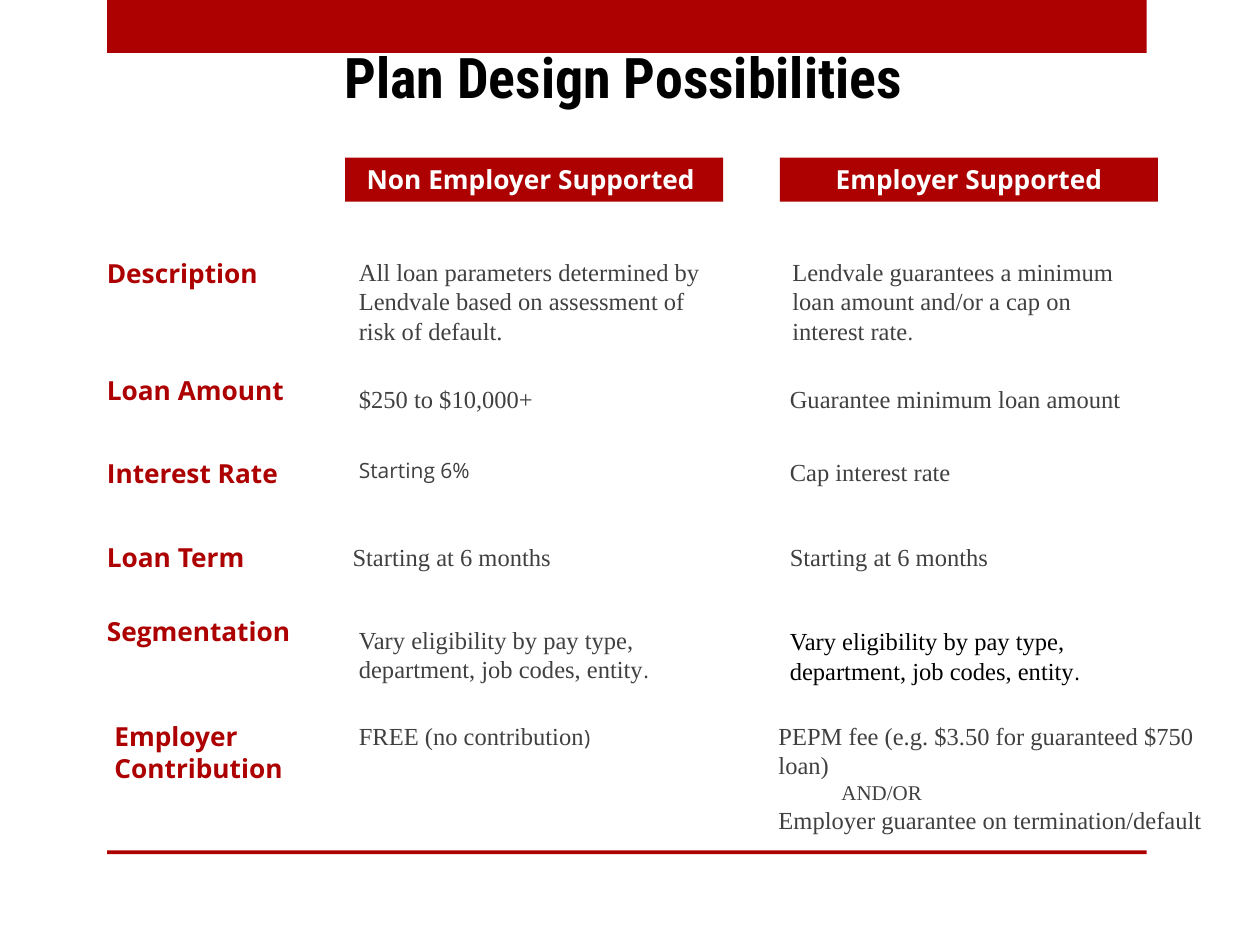
from dataclasses import dataclass

from pptx import Presentation
from pptx import util as u
from pptx.dml.color import RGBColor
from pptx.enum import shapes, text

COLORS = {"red": "AD0101", "grey": "404040", "black": "000000", "white": "FFFFFF"}
SERIF = {"name": "Times New Roman", "size": u.Pt(14), "color": "grey"}
SANS = {"name": "Open Sans", "size": u.Pt(12), "color": "grey"}
SMALL = {**SERIF, "size": u.Pt(12)}
DARK = {**SERIF, "color": "black"}
LABEL = {"name": "Open Sans", "size": u.Pt(15), "bold": True, "color": "red"}
HEADER = {**LABEL, "color": "white"}
TITLE = {"name": "Roboto Condensed", "size": u.Pt(32), "bold": True, "color": "black"}

LABEL_X, BASIC_X, SUPPORTED_X = 0.75, 2.75, 6.17
LABEL_WIDTH, CELL_WIDTH = 1.76, 3
HEADER_Y, HEADER_HEIGHT = 1.25, 0.35
ELIGIBILITY = "Vary eligibility by pay type, department, job codes, entity"


@dataclass
class Span:
    words: str
    style: dict


@dataclass
class Entry:
    """One text block: a list of paragraphs, each a list of spans."""
    left: float
    top: float
    width: float
    height: float
    paragraphs: list[list[Span]]


def label(words: str, top: float, left: float = LABEL_X,
          width: float = LABEL_WIDTH, height: float = 0.35) -> Entry:
    return Entry(left, top, width, height, [[Span(words, LABEL)]])


def cell(left: float, top: float, height: float, *spans: Span) -> Entry:
    return Entry(left, top, CELL_WIDTH, height, [list(spans)])


def serif(words: str) -> Span:
    return Span(words, SERIF)


ENTRIES = [
    label("Description", 1.99),
    label("Loan Amount", 2.92),
    label("Interest Rate", 3.58),
    label("Loan Term", 4.25),
    label("Segmentation", 4.83),
    label("Employer Contribution", 5.67, left=0.81, width=1.61, height=0.61),
    cell(BASIC_X, 1.99, 0.81, serif("All loan parameters determined by Lendvale "
                                    "based on assessment of risk of default.")),
    cell(BASIC_X, 3, 0.34, serif("$250 to $10,000+")),
    cell(BASIC_X, 3.58, 0.3, Span("Starting 6%", SANS)),
    cell(2.7, 4.25, 0.34, serif("Starting at 6 months")),
    cell(BASIC_X, 4.91, 0.57, serif(ELIGIBILITY), Span(".", SANS)),
    cell(BASIC_X, 5.67, 0.34, serif("FREE (no contribution"), Span(")", SANS)),
    cell(6.19, 1.99, 0.81, serif("Lendvale guarantees a minimum loan amount "
                                 "and/or a cap on interest rate"), Span(".", SANS)),
    cell(SUPPORTED_X, 3, 0.34, serif("Guarantee minimum loan amount")),
    cell(SUPPORTED_X, 3.58, 0.34, serif("Cap interest rate")),
    cell(SUPPORTED_X, 4.25, 0.34, serif("Starting at 6 months")),
    cell(SUPPORTED_X, 4.92, 0.57, Span(ELIGIBILITY, DARK),
         Span(".", {**SANS, "color": "black"})),
    Entry(6.08, 5.67, 3.92, 1.04, [
        [serif("PEPM fee (e.g. $3.50 for guaranteed $750 loan)")],
        [Span("\tAND/OR", SMALL)],
        [serif("Employer guarantee on termination/default")],
    ]),
]


def color(name: str) -> RGBColor:
    return RGBColor.from_string(COLORS[name])


def write(frame, paragraphs: list[list[Span]], align=text.PP_ALIGN.LEFT) -> None:
    frame.word_wrap = True
    for index, spans in enumerate(paragraphs):
        para = frame.add_paragraph() if index else frame.paragraphs[0]
        para.alignment = align
        for span in spans:
            run = para.add_run()
            run.text = span.words
            for key, value in span.style.items():
                if key == "color":
                    run.font.color.rgb = color(value)
                else:
                    setattr(run.font, key, value)


def add_band(page, left: float, top: float, width: float, height: float):
    band = page.shapes.add_shape(shapes.MSO_SHAPE.RECTANGLE, u.Inches(left),
                                 u.Inches(top), u.Inches(width), u.Inches(height))
    band.shadow.inherit = False
    band.fill.solid()
    band.fill.fore_color.rgb = color("red")
    band.line.fill.background()
    return band


def add_header(page, left: float, words: str) -> None:
    band = add_band(page, left, HEADER_Y, CELL_WIDTH, HEADER_HEIGHT)
    band.text_frame.vertical_anchor = text.MSO_ANCHOR.TOP
    write(band.text_frame, [[Span(words, HEADER)]], text.PP_ALIGN.CENTER)


def add_entry(page, entry: Entry, align=text.PP_ALIGN.LEFT):
    box = page.shapes.add_textbox(u.Inches(entry.left), u.Inches(entry.top),
                                  u.Inches(entry.width), u.Inches(entry.height))
    write(box.text_frame, entry.paragraphs, align)
    return box


def main() -> None:
    deck = Presentation()
    deck.slide_width, deck.slide_height = u.Inches(10), u.Inches(7.5)
    page = deck.slides.add_slide(deck.slide_layouts[6])

    add_band(page, 0.85, 0, 8.25, 0.42)
    add_band(page, 0.85, 6.75, 8.25, 0.03)
    title = Entry(0, 0.3, 10, 0.62, [[Span("Plan Design Possibilities ", TITLE)]])
    box = add_entry(page, title, text.PP_ALIGN.CENTER)
    box.text_frame.vertical_anchor = text.MSO_ANCHOR.BOTTOM
    add_header(page, 2.74, "Non Employer Supported ")
    add_header(page, 6.19, "Employer Supported")
    for entry in ENTRIES:
        add_entry(page, entry)

    deck.save("out.pptx")


if __name__ == "__main__":
    main()
